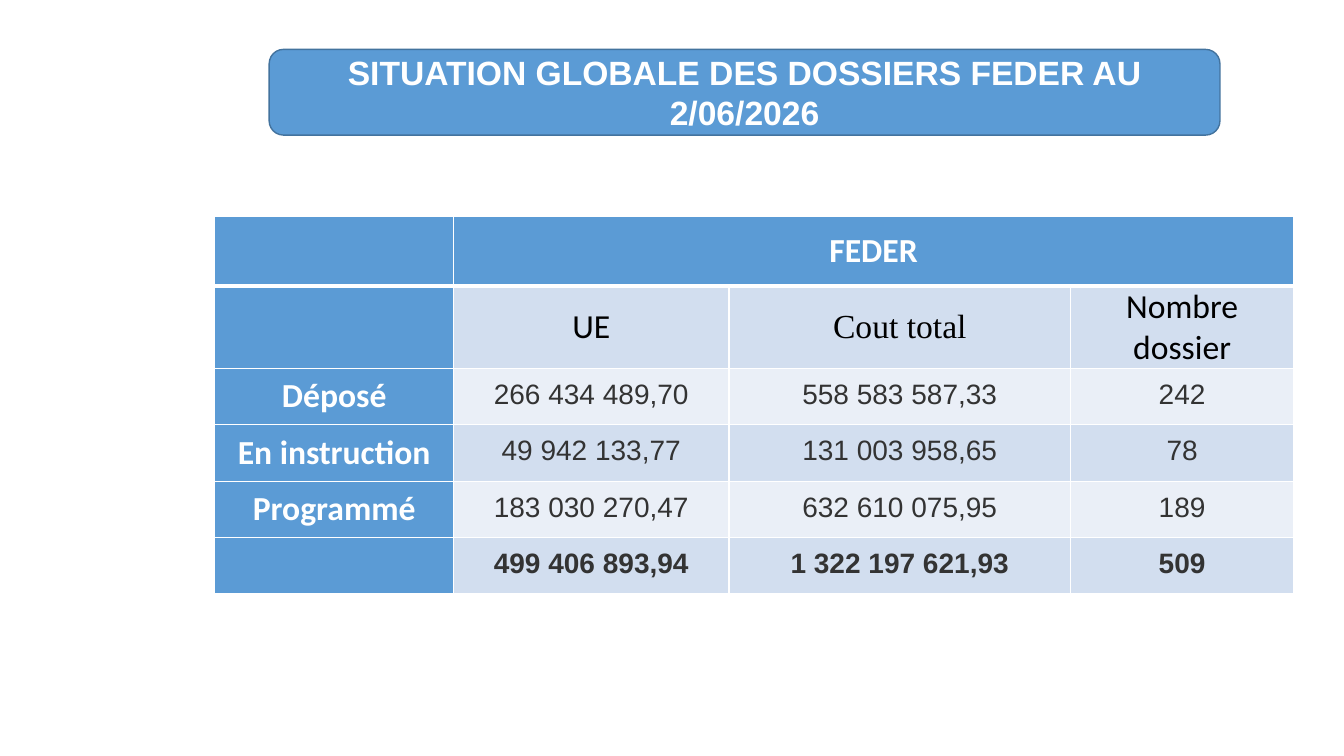
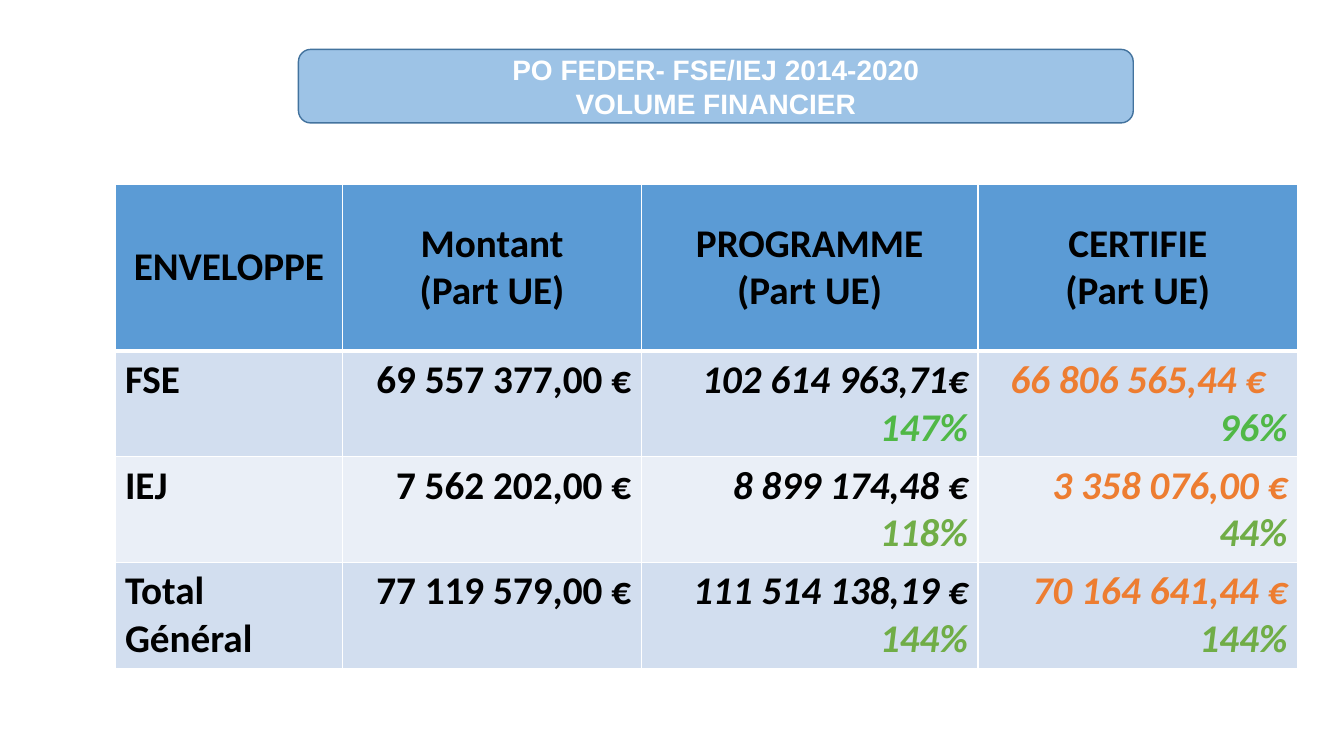
"""Builds two slides on European fund dossiers and financial volumes."""
import pptx
import pptx.dml.color
import pptx.enum.shapes
import pptx.enum.text
import pptx.oxml
import pptx.oxml.ns
import pptx.util

Inches = pptx.util.Inches
Pt = pptx.util.Pt
ALIGN = pptx.enum.text.PP_ALIGN
MIDDLE = pptx.enum.text.MSO_ANCHOR.MIDDLE
TOP = pptx.enum.text.MSO_ANCHOR.TOP

COLORS = {
    "blue": "5B9BD5", "light_blue": "9DC3E6", "outline": "43739E",
    "band_dark": "D2DEEF", "band_light": "EAEFF7",
    "white": "FFFFFF", "black": "000000", "gray": "333333",
    "orange": "ED7D31", "green": "70AD47", "bright_green": "50B846",
}
BANDS = ("band_dark", "band_light")
LABEL_INSETS = (0.05, 0, 0.05, 0)
NUMBER_INSETS = (0.01, 0.01, 0.01, 0.05)
DEFAULT_INSETS = (0.1, 0.05, 0.1, 0.05)

DOSSIER_TITLE = ["SITUATION GLOBALE DES DOSSIERS FEDER AU 2/06/2026"]
DOSSIER_FUND = "FEDER"
DOSSIER_HEADINGS = [("UE", "Calibri"), ("Cout total", "Times New Roman"), ("Nombre dossier", "Calibri")]
DOSSIER_ROWS = [
    ("Déposé", "266 434 489,70", "558 583 587,33", "242"),
    ("En instruction", "49 942 133,77", "131 003 958,65", "78"),
    ("Programmé", "183 030 270,47", "632 610 075,95", "189"),
    ("", "499 406 893,94", "1 322 197 621,93", "509"),
]

VOLUME_TITLE = ["PO FEDER- FSE/IEJ 2014-2020", "VOLUME FINANCIER"]
VOLUME_HEADINGS = [
    ["ENVELOPPE"], ["Montant", "(Part UE)"],
    ["PROGRAMME", "(Part UE)"], ["CERTIFIE", "(Part UE)"],
]
VOLUME_ROWS = [
    ("FSE", "69 557 377,00 €", ("102 614 963,71€", "147%"),
     ("66 806 565,44 €", "96%"), "bright_green", ALIGN.CENTER),
    ("IEJ", "7 562 202,00 €", ("8 899 174,48 €", "118%"),
     ("3 358 076,00 €", "44%"), "green", ALIGN.RIGHT),
    ("Total Général", "77 119 579,00 €", ("111 514 138,19 €", "144%"),
     ("70 164 641,44 €", "144%"), "green", ALIGN.RIGHT),
]


def rgb(name):
    return pptx.dml.color.RGBColor.from_string(COLORS[name])


def write_paragraph(paragraph, text, size, color, font="Calibri", bold=True,
                    italic=False, align=ALIGN.CENTER):
    paragraph.alignment = align
    run = paragraph.add_run()
    run.text = text
    run.font.name = font
    run.font.size = Pt(size)
    run.font.bold = bold
    run.font.italic = italic
    run.font.color.rgb = rgb(color)


def next_paragraph(frame, index):
    return frame.add_paragraph() if index else frame.paragraphs[0]


def add_titled_slide(presentation, lines, place, size, fill):
    slide = presentation.slides.add_slide(presentation.slide_layouts[5])
    box = [Inches(length) for length in place]
    banner = slide.shapes.add_shape(pptx.enum.shapes.MSO_SHAPE.ROUNDED_RECTANGLE, *box)
    banner.shadow.inherit = False
    banner.fill.solid()
    banner.fill.fore_color.rgb = rgb(fill)
    banner.line.color.rgb = rgb("outline")
    banner.line.width = Pt(1)
    title = slide.shapes.title
    title.left, title.top, title.width, title.height = box
    slide.shapes._spTree.append(title._element)
    frame = title.text_frame
    frame.word_wrap = True
    frame.auto_size = pptx.enum.text.MSO_AUTO_SIZE.NONE
    frame.vertical_anchor = MIDDLE
    for index, line in enumerate(lines):
        write_paragraph(next_paragraph(frame, index), line, size, "white", "Arial")
    return slide


def set_borders(cell, bottom_width):
    properties = cell._tc.get_or_add_tcPr()
    widths = {"lnL": 1, "lnR": 1, "lnT": 1, "lnB": bottom_width}
    for index, (tag, width) in enumerate(widths.items()):
        properties.insert(index, pptx.oxml.parse_xml(
            f'<a:{tag} {pptx.oxml.ns.nsdecls("a")} w="{Pt(width)}"><a:solidFill>'
            f'<a:srgbClr val="{COLORS["white"]}"/></a:solidFill></a:{tag}>'))


def add_plain_table(slide, left, top, widths, heights):
    table = slide.shapes.add_table(
        len(heights), len(widths), Inches(left), Inches(top),
        Inches(sum(widths)), Inches(sum(heights))).table
    table.first_row = table.horz_banding = False
    for column, width in zip(table.columns, widths):
        column.width = Inches(width)
    for row, height in zip(table.rows, heights):
        row.height = Inches(height)
    return table


def fill_cell(table, row, column, fill, lines=(), insets=DEFAULT_INSETS, anchor=MIDDLE):
    cell = table.cell(row, column)
    cell.fill.solid()
    cell.fill.fore_color.rgb = rgb(fill)
    set_borders(cell, 1 if row else 3)
    cell.margin_left, cell.margin_top, cell.margin_right, cell.margin_bottom = map(Inches, insets)
    cell.vertical_anchor = anchor
    for index, style in enumerate(lines):
        write_paragraph(next_paragraph(cell.text_frame, index), **style)


def build_dossier_slide(presentation):
    slide = add_titled_slide(presentation, DOSSIER_TITLE, (2.67, 0.49, 9.43, 0.85), 24, "blue")
    heights = [0.69, 0.81] + [0.56] * len(DOSSIER_ROWS)
    table = add_plain_table(slide, 2.13, 2.15, [2.37, 2.73, 3.39, 2.21], heights)

    def label(text):
        return [dict(text=text, size=24, color="white")] if text else []

    for column in range(4):
        fill_cell(table, 0, column, "blue", label(DOSSIER_FUND if column == 1 else ""), LABEL_INSETS)
    table.cell(0, 1).merge(table.cell(0, 3))
    fill_cell(table, 1, 0, "blue")
    for column, (text, font) in enumerate(DOSSIER_HEADINGS, 1):
        heading = dict(text=text, size=24, color="black", font=font, bold=False)
        fill_cell(table, 1, column, "band_dark", [heading], LABEL_INSETS)
    for row, (name, *numbers) in enumerate(DOSSIER_ROWS, 2):
        fill_cell(table, row, 0, "blue", label(name), LABEL_INSETS)
        for column, text in enumerate(numbers, 1):
            number = dict(text=text, size=20, color="gray", font="Arial", bold=not name)
            fill_cell(table, row, column, BANDS[(row - 1) % 2], [number], NUMBER_INSETS)


def build_volume_slide(presentation):
    slide = add_titled_slide(presentation, VOLUME_TITLE, (2.96, 0.49, 8.28, 0.73), 20, "light_blue")
    heights = [1.65] + [1.03] * len(VOLUME_ROWS)
    table = add_plain_table(slide, 1.14, 1.83, [2.26, 2.96, 3.34, 3.17], heights)

    def line(text, align, color="black", italic=False):
        return dict(text=text, size=28, color=color, italic=italic, align=align)

    for column, lines in enumerate(VOLUME_HEADINGS):
        fill_cell(table, 0, column, "blue", [line(text, ALIGN.CENTER) for text in lines])
    for row, (name, amount, programmed, certified, green, certified_align) in enumerate(VOLUME_ROWS, 1):
        cells = [
            [line(name, ALIGN.LEFT)],
            [line(amount, ALIGN.RIGHT)],
            [line(programmed[0], ALIGN.RIGHT, italic=True),
             line(programmed[1], ALIGN.RIGHT, green, True)],
            [line(certified[0], certified_align, "orange", True),
             line(certified[1], ALIGN.RIGHT, green, True)],
        ]
        for column, lines in enumerate(cells):
            fill_cell(table, row, column, BANDS[(row - 1) % 2], lines, anchor=TOP)


def main():
    presentation = pptx.Presentation()
    presentation.slide_width = Inches(13.33)
    presentation.slide_height = Inches(7.5)
    build_dossier_slide(presentation)
    build_volume_slide(presentation)
    presentation.save("out.pptx")


if __name__ == "__main__":
    main()
